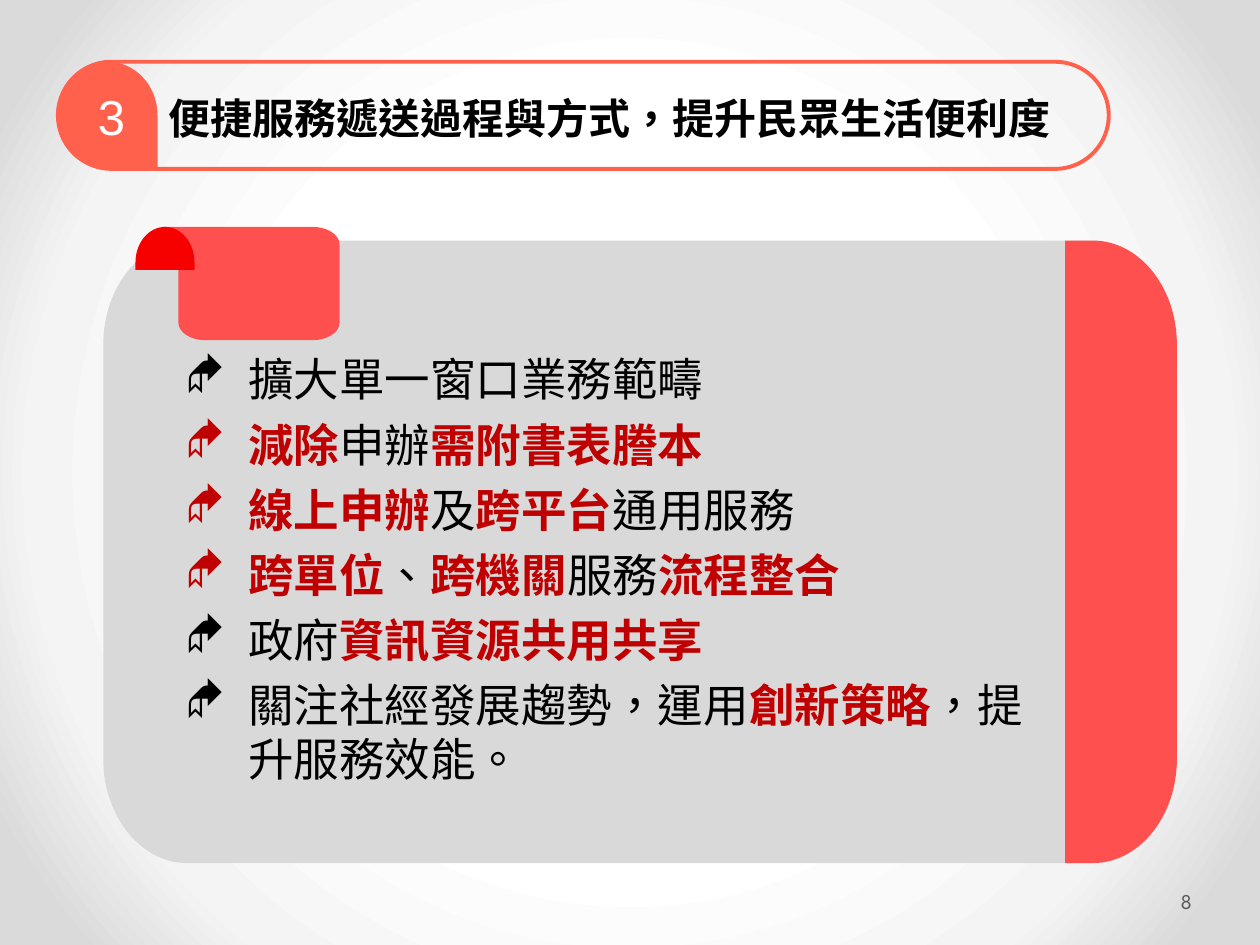
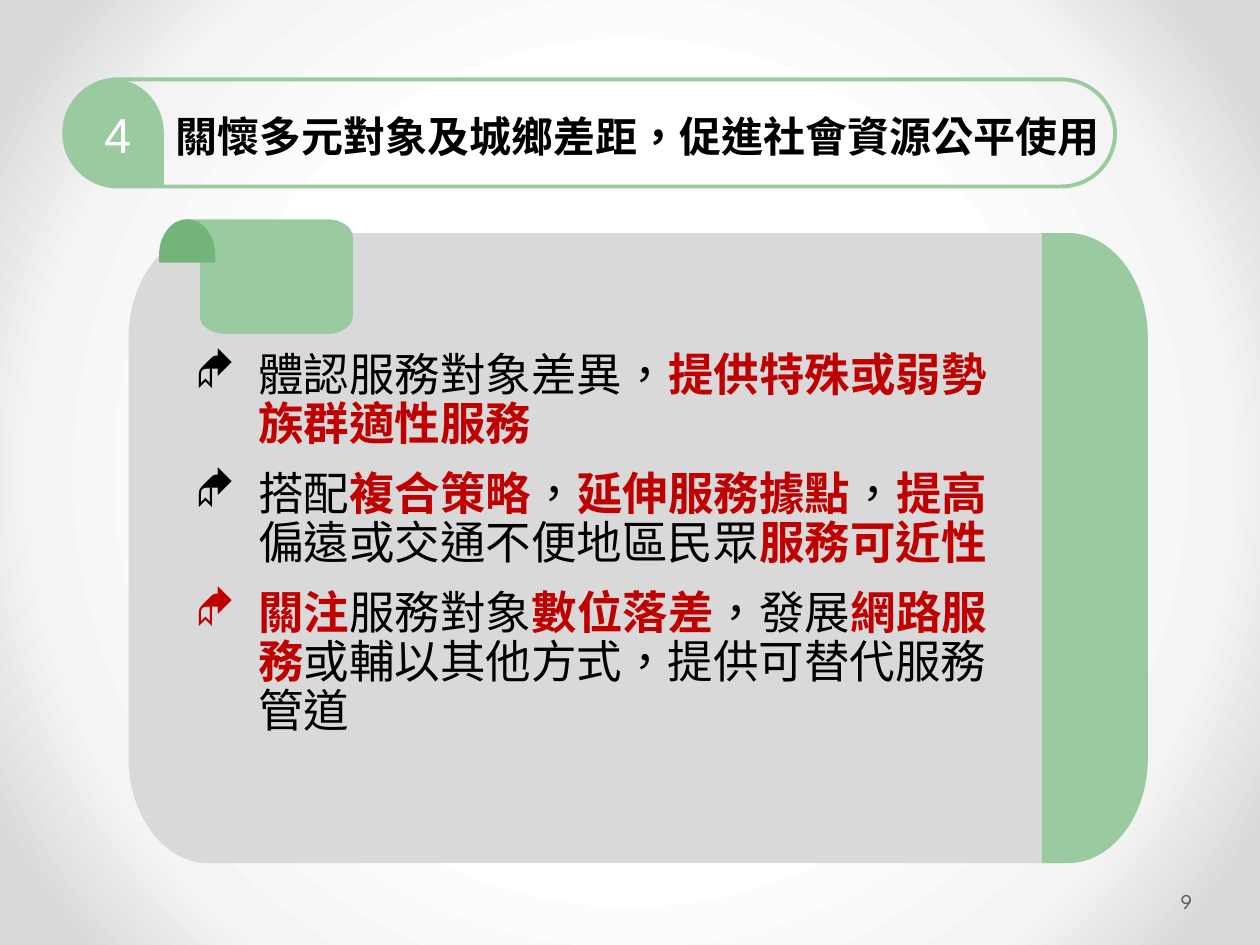
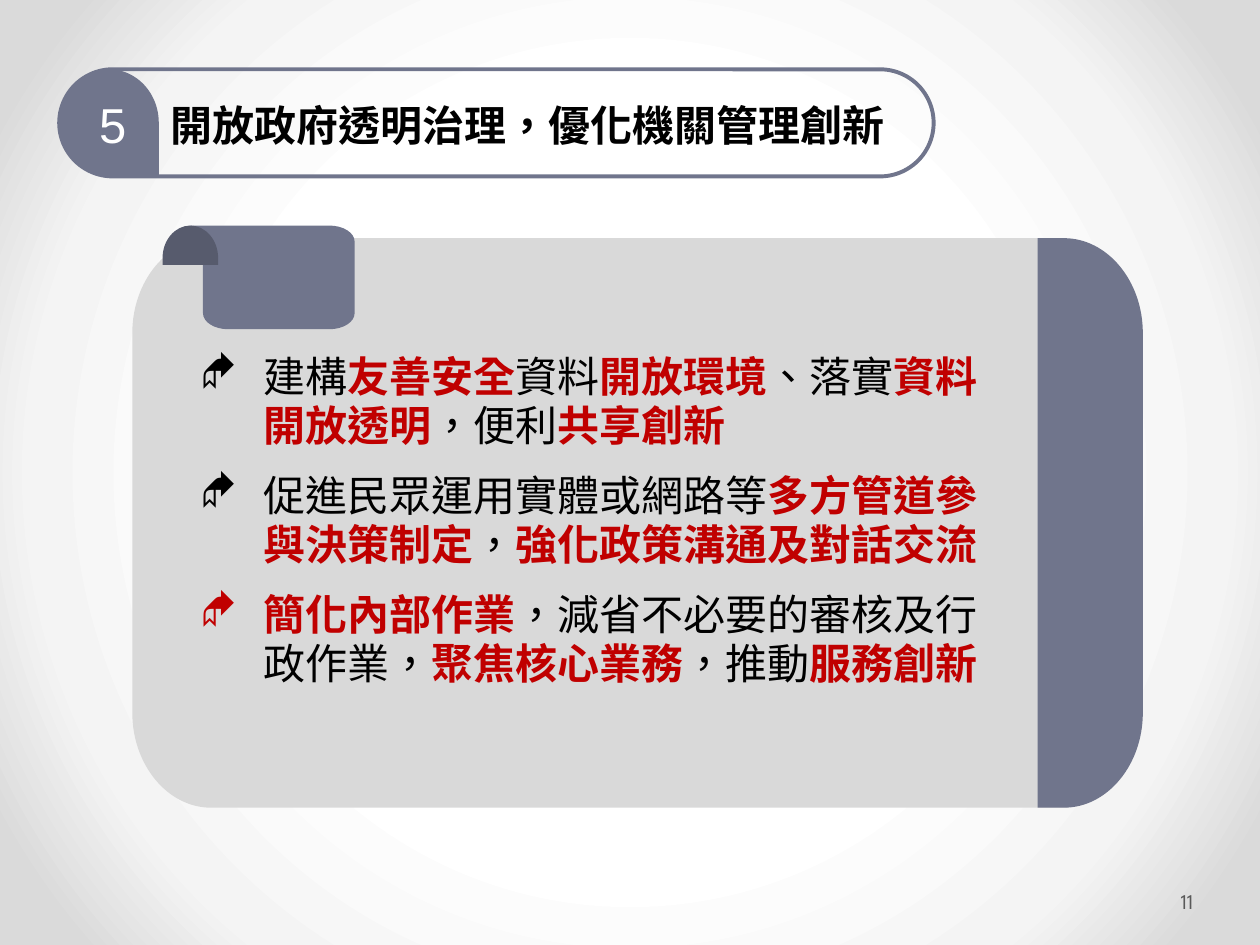
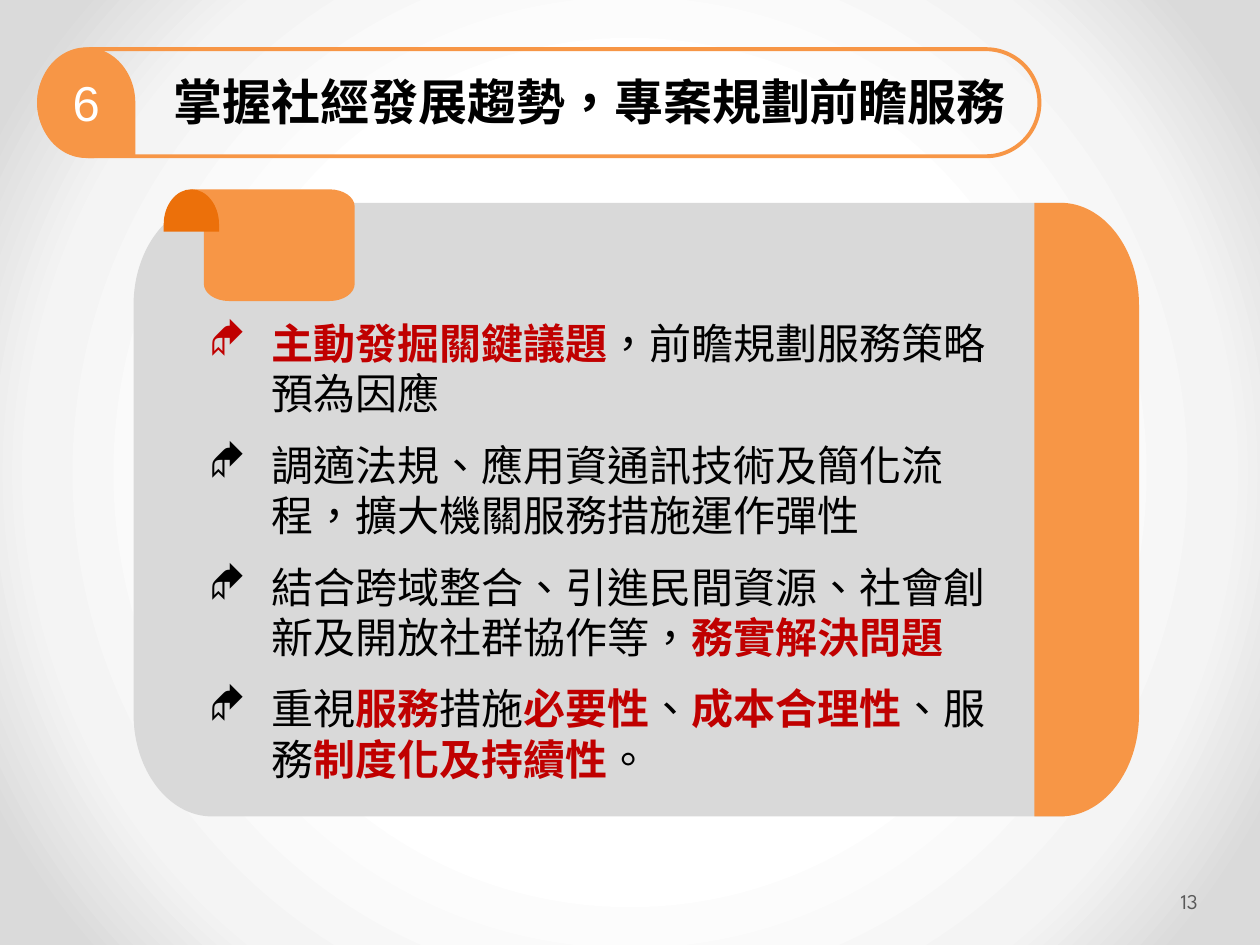
import lxml.etree
import pptx
import pptx.dml.color
import pptx.enum.shapes
import pptx.enum.text
import pptx.oxml.ns
import pptx.util

Inches, Pt = pptx.util.Inches, pptx.util.Pt
RGB = pptx.dml.color.RGBColor
SHAPE = pptx.enum.shapes.MSO_SHAPE
ALIGN = pptx.enum.text.PP_ALIGN
ANCHOR = pptx.enum.text.MSO_ANCHOR
FIT = pptx.enum.text.MSO_AUTO_SIZE
qn = pptx.oxml.ns.qn

# Shared colours and fonts
BLACK, WHITE = RGB(0x00, 0x00, 0x00), RGB(0xFF, 0xFF, 0xFF)
PANEL_GREY, FOOTER_GREY = RGB(0xD9, 0xD9, 0xD9), RGB(0x59, 0x59, 0x59)
EMPHASIS = RGB(0xC0, 0x00, 0x00)
CORAL, RED, DEEP_RED = RGB(0xFF, 0x61, 0x4C), RGB(0xFF, 0x50, 0x50), RGB(0xF6, 0x00, 0x00)
GREEN, DEEP_GREEN = RGB(0x9A, 0xCA, 0x9F), RGB(0x73, 0xB5, 0x79)
SLATE, DEEP_SLATE = RGB(0x70, 0x75, 0x8C), RGB(0x57, 0x5B, 0x6D)
ORANGE, DEEP_ORANGE = RGB(0xF7, 0x96, 0x46), RGB(0xEC, 0x70, 0x0A)
BACKDROP = [(50, "FFFFFF"), (76, "F4F4F4"), (92, "DADADA")]
ARIAL, CJK, FOOTER_FONT = "Arial", "Noto Sans CJK SC", "League Spartan"
PILL_HEIGHT = 0.85
ROUNDNESS = 0.55  # pull of a quarter ellipse towards its corner

# Text between asterisks is emphasised
SLIDES = [
    dict(
        page="8", number="3", title="便捷服務遞送過程與方式，提升民眾生活便利度",
        header=dict(box=(0.46, 0.49, 8.34), color=CORAL, title_w=8.2),
        panel=dict(box=(0.82, 1.91, 8.52, 4.94), color=RED, dark=DEEP_RED),
        body=dict(box=(1.37, 2.74, 7.05, 3.95), size=26, font=CJK, before=6),
        points=[
            "擴大單一窗口業務範疇",
            "*減除*申辦*需附書表謄本*",
            "*線上申辦*及*跨平台*通用服務",
            "*跨單位*、*跨機關*服務*流程整合*",
            "政府*資訊資源共用共享*",
            "關注社經發展趨勢，運用*創新策略*，提升服務效能。",
        ],
    ),
    dict(
        page="9", number="4", title="關懷多元對象及城鄉差距，促進社會資源公平使用",
        header=dict(box=(0.51, 0.63, 8.34), color=GREEN, title_w=8.2),
        panel=dict(box=(1.02, 1.85, 8.09, 5), color=GREEN, dark=DEEP_GREEN),
        body=dict(box=(1.45, 2.74, 6.62, 3.19), size=26, font=ARIAL, spacing=Pt(28)),
        points=[
            "體認服務對象差異，*提供特殊或弱勢族群適性服務*",
            "搭配*複合策略*，*延伸服務據點*，*提高*偏遠或交通不便地區民眾*服務可近性*",
            "*關注*服務對象*數位落差*，發展*網路服務*或輔以其他方式，提供可替代服務管道",
        ],
    ),
    dict(
        page="11", number="5", title="開放政府透明治理，優化機關管理創新",
        header=dict(box=(0.47, 0.55, 6.94), color=SLATE, title_w=6.7),
        panel=dict(box=(1.05, 1.89, 8.02, 4.52), color=SLATE, dark=DEEP_SLATE),
        body=dict(box=(1.49, 2.74, 6.56, 2.79), size=24, font=CJK, spacing=Pt(28)),
        points=[
            "建構*友善安全*資料*開放環境*、落實*資料開放透明*，便利*共享創新*",
            "促進民眾運用實體或網路等*多方管道參與決策制定*，*強化政策溝通及對話交流*",
            "*簡化內部作業*，減省不必要的審核及行政作業，*聚焦核心業務*，推動*服務創新*",
        ],
    ),
    dict(
        page="13", number="6", title="掌握社經發展趨勢，專案規劃前瞻服務",
        header=dict(box=(0.31, 0.39, 7.94), color=ORANGE, title_w=7.54, title_dx=0.58,
                    title_size=28, badge_w=0.75, number_at=(0.02, 0.14), badge_line=2),
        panel=dict(box=(1.06, 1.61, 7.98, 4.87), color=ORANGE, dark=DEEP_ORANGE),
        body=dict(box=(1.56, 2.47, 6.69, 4.38), size=24, font=CJK),
        points=[
            "*主動發掘關鍵議題*，前瞻規劃服務策略預為因應",
            "調適法規、應用資通訊技術及簡化流程，擴大機關服務措施運作彈性",
            "結合跨域整合、引進民間資源、社會創新及開放社群協作等，*務實解決問題*",
            "重視*服務*措施*必要性*、*成本合理性*、服務*制度化及持續性*。",
        ],
    ),
]


def apply(obj, fmt):
    for name, value in fmt.items():
        setattr(obj, name, value)


def inches(*values):
    return [Inches(v) for v in values]


def paint(sp, fill=None, line=None, width=0):
    sp.shadow.inherit = False
    if fill is None:
        sp.fill.background()
    else:
        sp.fill.solid()
        sp.fill.fore_color.rgb = fill
    if line is None:
        sp.line.fill.background()
    else:
        sp.line.color.rgb = line
        sp.line.width = Pt(width)


def add_run(p, text, size, font, color, bold=False):
    r = p.add_run()
    r.text = text
    apply(r.font, dict(size=Pt(size), name=font, bold=bold))
    r.font.color.rgb = color
    rPr = r._r.get_or_add_rPr()
    rPr.set("lang", "zh-TW")
    rPr.find(qn("a:latin")).addnext(rPr.makeelement(qn("a:ea"), {"typeface": CJK}))


def add_text(shapes, box, **fmt):
    tf = shapes.add_textbox(*inches(*box)).text_frame
    apply(tf, dict(word_wrap=True, auto_size=FIT.SHAPE_TO_FIT_TEXT) | fmt)
    return tf


def set_indent(p, left, first):
    pPr = p._p.get_or_add_pPr()
    pPr.set("marL", str(Inches(left)))
    pPr.set("indent", str(Inches(first)))
    pPr.set("hangingPunct", "0")
    return pPr


def set_backdrop(master):
    """Radial white-to-grey gradient behind every slide."""
    master.background.fill.gradient()
    grad = master.element.find(".//" + qn("a:gradFill"))
    for child in list(grad):
        grad.remove(child)
    stops = lxml.etree.SubElement(grad, qn("a:gsLst"))
    for position, color in BACKDROP:
        stop = lxml.etree.SubElement(stops, qn("a:gs"), pos=str(position * 1000))
        lxml.etree.SubElement(stop, qn("a:srgbClr"), val=color)
    radial = lxml.etree.SubElement(grad, qn("a:path"), path="circle")
    lxml.etree.SubElement(radial, qn("a:fillToRect"),
                          {side: "50000" for side in "ltrb"})


def add_outline(shapes, box, steps, color):
    """Filled outline in fractions of the box.

    A step is (end,) for a line or (corner, end) for a quarter ellipse.
    """
    x, y, w, h = box
    steps = [[inches(x + w * fx, y + h * fy) for fx, fy in step] for step in steps]
    ends = [step[-1] for step in steps]
    builder = shapes.build_freeform(*ends[0])
    builder.add_line_segments(ends[1:], close=True)
    sp = builder.convert_to_shape()
    paint(sp, color)
    left, top = (min(values) for values in zip(*ends))
    lines = sp.element.findall(".//" + qn("a:lnTo"))
    for line, start, step in zip(lines, ends, steps[1:]):
        if len(step) == 2:
            corner, end = step
            curve = line.makeelement(qn("a:cubicBezTo"), {})
            pulled = [[a + ROUNDNESS * (c - a) for a, c in zip(point, corner)]
                      for point in (start, end)]
            for px, py in pulled + [end]:
                lxml.etree.SubElement(curve, qn("a:pt"), x=str(round(px - left)),
                                      y=str(round(py - top)))
            line.getparent().replace(line, curve)


def add_panel(s, box, color, dark):
    shapes = s.shapes.add_group_shape().shapes
    rx, ry = 0.078, 1 / 6
    # Grey sheet, then its coloured right edge
    add_outline(shapes, box, [
        [(rx, 0)], [(0.925, 0)], [(0.925, 1)], [(rx, 1)],
        [(0, 1), (0, 1 - ry)], [(0, ry)], [(0, 0), (rx, 0)]], PANEL_GREY)
    add_outline(shapes, box, [
        [(0.896, 0)], [(1 - rx, 0)], [(1, 0), (1, ry)],
        [(1, 1 - ry)], [(1, 1), (1 - rx, 1)], [(0.896, 1)]], color)
    # Ribbon hanging over the top edge
    tip, left, right, top, bottom = 0.055, 0.07, 0.22, -0.022, 0.16
    cx, cy = 0.025, 0.028
    add_outline(shapes, box, [
        [(tip, top)], [(right - cx, top)], [(right, top), (right, top + cy)],
        [(right, bottom - cy)], [(right, bottom), (right - cx, bottom)],
        [(left + cx, bottom)], [(left, bottom), (left, bottom - cy)],
        [(left, top + 0.018)], [(left, top), (tip, top)]], color)
    # Dark curl of the ribbon
    near, far, base, spring = 0.03, 0.085, 0.047, 0.035
    middle = (near + far) / 2
    add_outline(shapes, box, [
        [(middle, top)], [(far, top), (far, spring)], [(far, base)],
        [(near, base)], [(near, spring)], [(near, top), (middle, top)]], dark)


def add_header(s, number, title, box, color, title_w, title_dx=0.39, title_size=24,
               badge_w=0.79, number_at=(0.07, 0.15), badge_line=None):
    x, y, w = box
    shapes = s.shapes.add_group_shape().shapes
    # Pill outline and numbered badge
    pill = shapes.add_shape(SHAPE.ROUNDED_RECTANGLE, *inches(x, y, w, PILL_HEIGHT))
    pill.adjustments[0] = 0.5
    paint(pill, line=color, width=2.25)
    badge = shapes.add_shape(SHAPE.TEAR, *inches(x, y, badge_w, PILL_HEIGHT))
    badge.element.spPr.find(qn("a:xfrm")).set("flipV", "1")
    paint(badge, color, color if badge_line else None, badge_line or 0)
    dx, dy = number_at
    p = add_text(shapes, (x + dx, y + dy, 0.71, 0.57)).paragraphs[0]
    p.alignment = ALIGN.CENTER
    add_run(p, number, 28, ARIAL, WHITE)
    # Title
    sp = s.shapes.title
    apply(sp, dict(zip(("left", "top", "width", "height"),
                       inches(x + title_dx, y + 0.26, title_w, 0.44))))
    apply(sp.text_frame, dict(word_wrap=True, vertical_anchor=ANCHOR.TOP,
                              auto_size=FIT.SHAPE_TO_FIT_TEXT))
    p = sp.text_frame.paragraphs[0]
    apply(p, dict(alignment=ALIGN.LEFT, line_spacing=Pt(24)))
    set_indent(p, 0.39, 0)
    add_run(p, title, title_size, ARIAL, BLACK, True)


def add_body(s, points, box, size, font, before=12, spacing=None):
    tf = add_text(s.shapes, box)
    for i, point in enumerate(points):
        p = tf.add_paragraph() if i else tf.paragraphs[0]
        apply(p, dict(space_before=Pt(before), line_spacing=spacing))
        pPr = set_indent(p, 0.5, -0.5)
        lxml.etree.SubElement(pPr, qn("a:buFont"), typeface="Wingdings", charset="2")
        lxml.etree.SubElement(pPr, qn("a:buChar"), char="◆")
        for j, part in enumerate(point.split("*")):
            if part:
                strong = j % 2 == 1
                add_run(p, part, size, font, EMPHASIS if strong else BLACK, strong)


def add_page_number(s, page):
    edge = Inches(0.05)
    tf = add_text(s.shapes, (9.34, 6.95, 0.61, 0.4), auto_size=FIT.NONE,
                  vertical_anchor=ANCHOR.MIDDLE, margin_left=Inches(0.03),
                  margin_top=edge, margin_right=edge, margin_bottom=edge)
    add_run(tf.paragraphs[0], page, 12, FOOTER_FONT, FOOTER_GREY)


def main():
    prs = pptx.Presentation()
    prs.slide_width, prs.slide_height = inches(10, 7.5)
    set_backdrop(prs.slide_master)
    for data in SLIDES:
        s = prs.slides.add_slide(prs.slide_layouts[5])
        add_panel(s, **data["panel"])
        add_page_number(s, data["page"])
        add_body(s, data["points"], **data["body"])
        add_header(s, data["number"], data["title"], **data["header"])
    prs.save("out.pptx")


if __name__ == "__main__":
    main()
